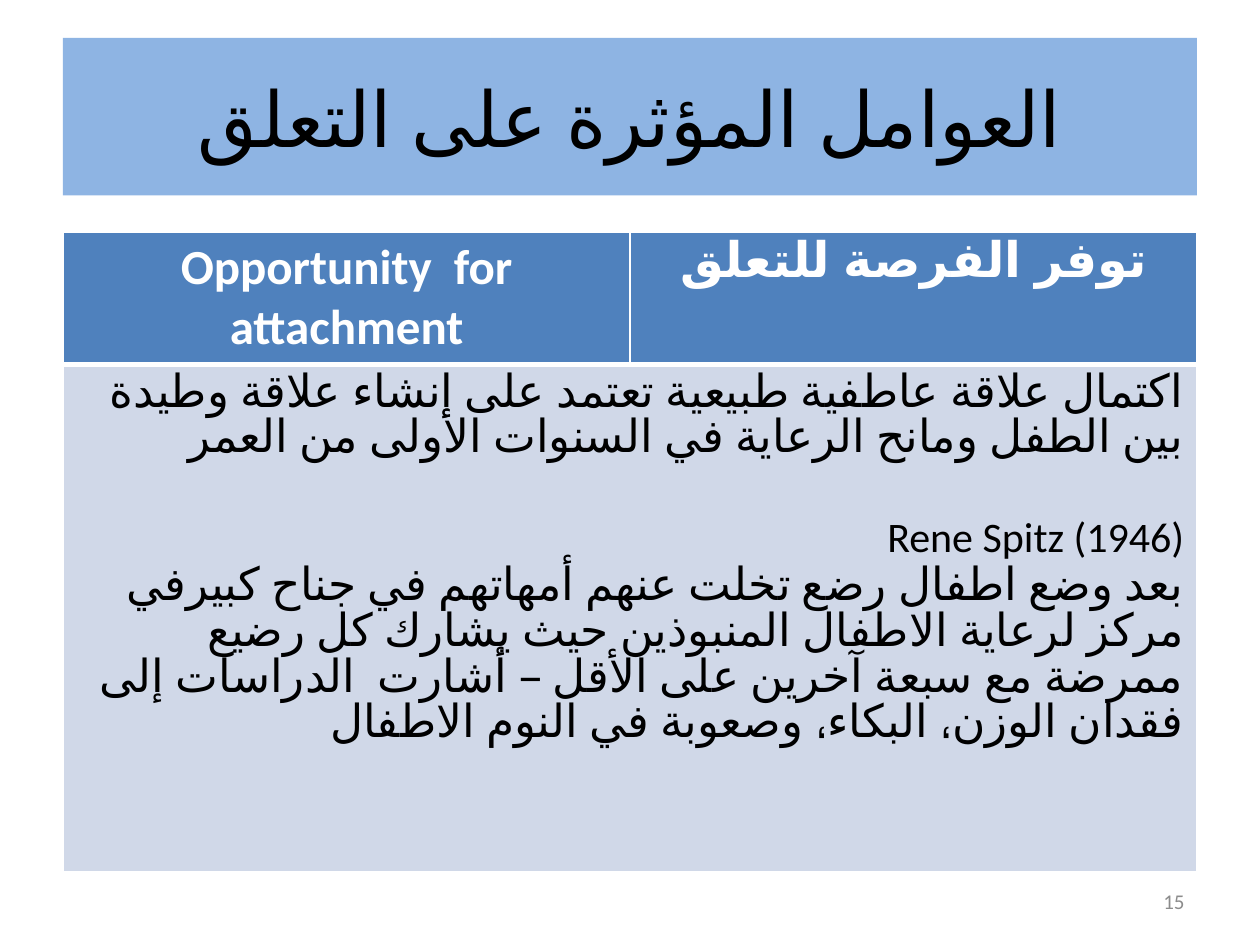
from lxml.etree import SubElement
from pptx import Presentation
from pptx.dml.color import RGBColor
from pptx.enum.lang import MSO_LANGUAGE_ID
from pptx.enum.shapes import MSO_SHAPE
from pptx.enum.text import MSO_ANCHOR, PP_ALIGN
from pptx.oxml.ns import qn
from pptx.util import Inches, Pt

MARGIN = 0.5
CONTENT_WIDTH = 9
TITLE = "العوامل المؤثرة على التعلق"
HEADERS = [("Opportunity  for attachment", False), ("توفر الفرصة للتعلق", True)]
BODY = [
    ("اكتمال علاقة عاطفية طبيعية تعتمد على إنشاء علاقة وطيدة بين الطفل ومانح "
     "الرعاية في السنوات الأولى من العمر", 26, True, 0),
    ("Rene Spitz (1946)", 24, False, 29.3),
    ("بعد وضع اطفال رضع تخلت عنهم أمهاتهم في جناح كبيرفي مركز لرعاية الاطفال "
     "المنبوذين حيث يشارك كل رضيع ممرضة مع سبعة آخرين على الأقل – أشارت  الدراسات "
     "إلى فقدان الوزن، البكاء، وصعوبة في النوم الاطفال", 26, True, 0),
]


def color(value):
    """Turn a hex string into a colour."""
    return RGBColor.from_string(value)


def fill_solid(target, value):
    """Give a shape or cell a plain fill."""
    target.fill.solid()
    target.fill.fore_color.rgb = color(value)


def write(paragraph, text, size, ink, align, bold=False, rtl=False, before=0):
    """Add one styled run to a paragraph."""
    paragraph.alignment = align
    paragraph.space_before = Pt(before)
    run = paragraph.add_run()
    run.text = text
    run.font.name = "Calibri"
    run.font.size = Pt(size)
    run.font.bold = bold
    run.font.color.rgb = color(ink)
    if rtl:
        paragraph._p.get_or_add_pPr().set("rtl", "1")
        run.font.language_id = MSO_LANGUAGE_ID.ARABIC


def set_borders(cell, **widths):
    """Draw white cell borders with the given widths in points."""
    properties = cell._tc.get_or_add_tcPr()
    for index, side in enumerate(("L", "R", "T", "B")):
        line = properties.makeelement(qn(f"a:ln{side}"), {"w": str(Pt(widths.get(side, 1)))})
        fill = SubElement(line, qn("a:solidFill"))
        SubElement(fill, qn("a:srgbClr"), val="FFFFFF")
        properties.insert(index, line)


def add_title(slide):
    """Add the title band."""
    band = slide.shapes.add_shape(MSO_SHAPE.RECTANGLE, Inches(MARGIN), Inches(0.3),
                                  Inches(CONTENT_WIDTH), Inches(1.25))
    band.shadow.inherit = False
    band.line.fill.background()
    fill_solid(band, "8EB4E3")
    band.text_frame.word_wrap = True
    band.text_frame.vertical_anchor = MSO_ANCHOR.MIDDLE
    write(band.text_frame.paragraphs[0], TITLE, 44, "000000", PP_ALIGN.CENTER, rtl=True)


def add_factor_table(slide):
    """Add the header pair above one merged description cell."""
    heights = (1.03, 4.03)
    table = slide.shapes.add_table(2, len(HEADERS), Inches(MARGIN), Inches(1.84),
                                   Inches(CONTENT_WIDTH), Inches(sum(heights))).table
    for row, height in zip(table.rows, heights):
        row.height = Inches(height)
    for column, (text, rtl) in enumerate(HEADERS):
        cell = table.cell(0, column)
        fill_solid(cell, "4F81BD")
        set_borders(cell, B=3)
        write(cell.text_frame.paragraphs[0], text, 28, "FFFFFF", PP_ALIGN.CENTER, True, rtl)
    description = table.cell(1, 0)
    description.merge(table.cell(1, len(HEADERS) - 1))
    for cell in table.rows[1].cells:
        fill_solid(cell, "D0D8E8")
        set_borders(cell, T=3)
    frame = description.text_frame
    for index, (text, size, rtl, before) in enumerate(BODY):
        paragraph = frame.add_paragraph() if index else frame.paragraphs[0]
        write(paragraph, text, size, "000000", PP_ALIGN.RIGHT, rtl=rtl, before=before)


def add_page_number(slide):
    """Add the page number at the lower right."""
    width = 2.33
    box = slide.shapes.add_textbox(Inches(MARGIN + CONTENT_WIDTH - width), Inches(6.95),
                                   Inches(width), Inches(0.4))
    box.text_frame.word_wrap = True
    box.text_frame.vertical_anchor = MSO_ANCHOR.MIDDLE
    write(box.text_frame.paragraphs[0], "15", 12, "8C8C8C", PP_ALIGN.RIGHT)


def main():
    """Build and save the slide."""
    presentation = Presentation()
    presentation.slide_width = Inches(10)
    presentation.slide_height = Inches(7.5)
    slide = presentation.slides.add_slide(presentation.slide_layouts[6])
    add_title(slide)
    add_factor_table(slide)
    add_page_number(slide)
    presentation.save("out.pptx")


if __name__ == "__main__":
    main()
